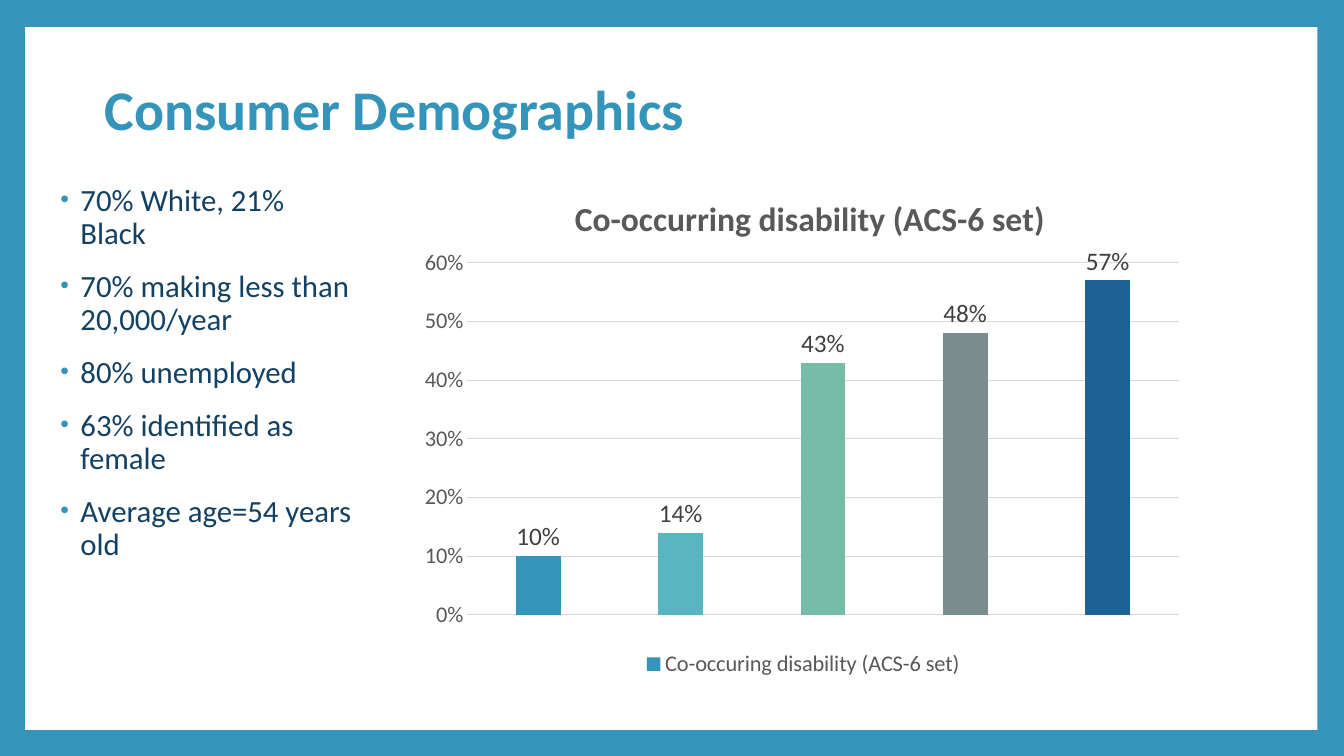
from lxml.etree import SubElement
from pptx import Presentation
from pptx.chart.data import CategoryChartData
from pptx.dml.color import RGBColor
from pptx.enum.chart import (XL_CHART_TYPE, XL_LABEL_POSITION,
                             XL_LEGEND_POSITION, XL_TICK_MARK)
from pptx.enum.shapes import MSO_SHAPE
from pptx.enum.text import MSO_ANCHOR
from pptx.oxml.ns import qn
from pptx.util import Pt

FONT = "Calibri"
BLUE, NAVY, WHITE = "3494BA", "134163", "FFFFFF"
GRAY, DARK_GRAY, GRID = "595959", "404040", "D9D9D9"
BAR_COLORS = [BLUE, "58B6C0", "75BDA7", "7A8C8E", "1D6294"]
FACTS = ["70% White, 21% Black", "70% making less than 20,000/year",
         "80% unemployed", "63% identified as female",
         "Average age=54 years old"]


def rgb(color):
    return RGBColor.from_string(color)


def fill(target, color):
    target.fill.solid()
    target.fill.fore_color.rgb = rgb(color)


def style(font, size, color, bold=False):
    font.name, font.size, font.bold = FONT, Pt(size), bold
    font.color.rgb = rgb(color)


def add_text(p, text, **fmt):
    r = p.add_run()
    r.text = text
    style(r.font, **fmt)


def add_box(s, box):
    tf = s.shapes.add_textbox(*map(Pt, box)).text_frame
    tf.word_wrap = True
    return tf


def add_bullet(p, color, percent):
    pPr = p._p.get_or_add_pPr()
    pPr.set("marL", str(Pt(18)))
    pPr.set("indent", str(-Pt(14.4)))
    clr = SubElement(pPr, qn("a:buClr"))
    SubElement(clr, qn("a:srgbClr"), val=color)
    SubElement(pPr, qn("a:buSzPct"), val=str(percent * 1000))
    SubElement(pPr, qn("a:buFont"), typeface="Arial")
    SubElement(pPr, qn("a:buChar"), char="•")


def set_layout(parent, **values):
    """Place a chart part by fractions of the chart's size."""
    for old in parent.findall(qn("c:layout")):
        parent.remove(old)
    layout = SubElement(parent, qn("c:layout"))
    manual = SubElement(layout, qn("c:manualLayout"))
    for name, value in values.items():
        SubElement(manual, qn("c:" + name), val=str(value))
    return layout


def frame(s, box):
    fill(s.background, BLUE)
    sp = s.shapes.add_shape(MSO_SHAPE.RECTANGLE, *map(Pt, box))
    sp.shadow.inherit = False
    fill(sp, WHITE)
    sp.line.fill.background()


def title(s, box, text):
    tf = add_box(s, box)
    tf.vertical_anchor = MSO_ANCHOR.MIDDLE
    p = tf.paragraphs[0]
    p.line_spacing = 0.9
    add_text(p, text, size=40, color=BLUE, bold=True)


def bullet_list(s, box, items):
    tf = add_box(s, box)
    for i, item in enumerate(items):
        p = tf.add_paragraph() if i else tf.paragraphs[0]
        p.line_spacing = 0.9
        p.space_before = Pt(14)
        add_bullet(p, BLUE, 80)
        add_text(p, item, size=22, color=NAVY)


def disability_chart(s, box):
    data = CategoryChartData(number_format="0%")
    data.categories = ["1", "2", "3", "4", "5"]
    data.add_series("Co-occuring disability (ACS-6 set)",
                    [0.10, 0.14, 0.43, 0.48, 0.57])
    chart = s.shapes.add_chart(XL_CHART_TYPE.COLUMN_CLUSTERED,
                               *map(Pt, box), data).chart
    style(chart.font, 10, "000000")

    # Heading and legend
    chart.has_title = True
    heading = chart.chart_title
    add_text(heading.text_frame.paragraphs[0],
             "Co-occurring disability (ACS-6 set)",
             size=24, color=GRAY, bold=True)
    heading.include_in_layout = False
    layout = set_layout(heading._element, xMode="edge", yMode="edge",
                        x=0.2, y=0.05)
    heading._element.find(qn("c:tx")).addnext(layout)
    chart.has_legend = True
    chart.legend.position = XL_LEGEND_POSITION.BOTTOM
    chart.legend.include_in_layout = False
    style(chart.legend.font, 16, GRAY)

    # Axes
    chart.category_axis.visible = False
    axis = chart.value_axis
    axis.minimum_scale, axis.maximum_scale, axis.major_unit = 0, 0.6, 0.1
    axis.major_tick_mark = axis.minor_tick_mark = XL_TICK_MARK.NONE
    axis.format.line.fill.background()
    grid = axis.major_gridlines.format.line
    grid.width = Pt(0.75)
    grid.color.rgb = rgb(GRID)
    style(axis.tick_labels.font, 16, GRAY)
    axis.tick_labels.number_format = "0%"
    axis.tick_labels.number_format_is_linked = False

    # Columns and their labels
    plot = chart.plots[0]
    plot.vary_by_categories = False
    plot.gap_width, plot.overlap = 219, -27
    series = plot.series[0]
    fill(series.format, BLUE)
    for i, color in enumerate(BAR_COLORS[1:], 1):
        fill(series.points[i].format, color)
    labels = series.data_labels
    labels.show_value = True
    labels.position = XL_LABEL_POSITION.OUTSIDE_END
    labels.number_format, labels.number_format_is_linked = "0%", False
    style(labels.font, 18, DARK_GRAY)
    area = chart._chartSpace.chart.plotArea
    area.insert(0, set_layout(area, layoutTarget="inner", xMode="edge",
                              yMode="edge", x=0.07, y=0.19, w=0.91, h=0.68))


def main():
    prs = Presentation()
    prs.slide_width, prs.slide_height = Pt(960), Pt(540)
    s = prs.slides.add_slide(prs.slide_layouts[6])
    frame(s, (18, 19.4, 923, 502))
    title(s, (67.7, 49.7, 534, 61), "Consumer Demographics")
    bullet_list(s, (32.4, 128.2, 226.8, 385), FACTS)
    disability_chart(s, (294.5, 117.4, 558.7, 370))
    prs.save("out.pptx")


if __name__ == "__main__":
    main()
